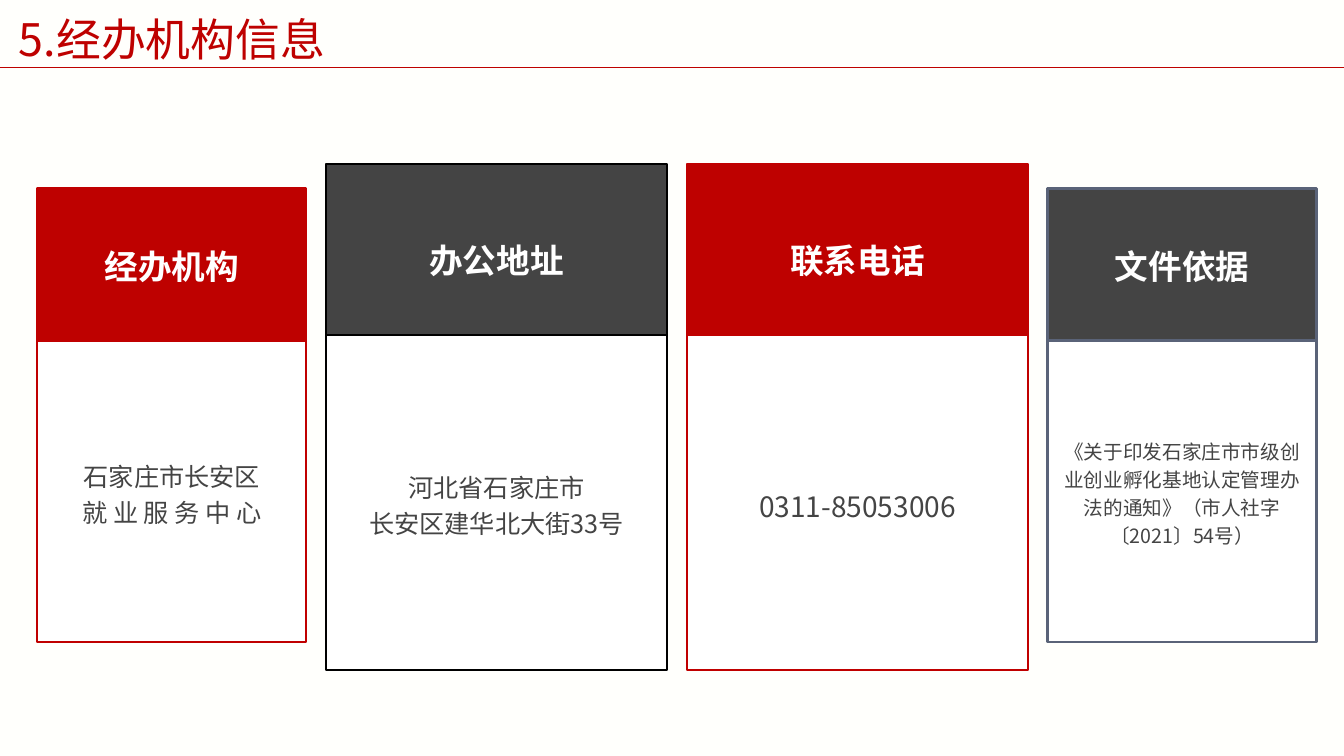
from lxml.etree import SubElement
from pptx import Presentation
from pptx.dml.color import RGBColor
from pptx.enum.shapes import MSO_CONNECTOR as Connector, MSO_SHAPE as Shape
from pptx.enum.text import MSO_ANCHOR as Anchor, PP_ALIGN as Align
from pptx.oxml.ns import qn
from pptx.util import Inches, Pt

RED, BORDER_RED, GREY, WHITE = "BE0100", "C00000", "444444", "FFFFFF"
BLACK, SLATE = "000000", "5A6378"

# Card sizes: top, width, heading height, body height
SMALL = (1.87, 2.67, 1.51, 2.99)
LARGE = (1.63, 3.39, 1.69, 3.33)
FIRST_LEFT, GAP = 0.37, 0.19

# Size, heading, body, body text size, heading fill, border, border width
CARDS = [
    (SMALL, "经办机构", "石家庄市长安区\n就 业 服 务 中 心", 18, RED, BORDER_RED, 1.5),
    (LARGE, "办公地址", "河北省石家庄市\n长安区建华北大街33号", 18, GREY, BLACK, 1.5),
    (LARGE, "联系电话", "0311-85053006", 20, RED, BORDER_RED, 1.5),
    (SMALL, "文件依据",
     "《关于印发石家庄市市级创业创业孵化基地认定管理办法的通知》（市人社字〔2021〕54号）",
     14, GREY, SLATE, 1.75),
]


def color(value):
    return RGBColor.from_string(value)


def write_text(frame, text, font, size, text_color, bold=False, align=Align.CENTER,
               spacing=None, anchor=Anchor.MIDDLE, wrap=True, bottom=0.05):
    """Fill a text frame, one paragraph for each line of text."""
    frame.word_wrap = wrap
    frame.vertical_anchor = anchor
    frame.margin_bottom = Inches(bottom)
    for number, line in enumerate(text.split("\n")):
        paragraph = frame.add_paragraph() if number else frame.paragraphs[0]
        paragraph.alignment = align
        if spacing:
            paragraph.line_spacing = spacing
        run = paragraph.add_run()
        run.text = line
        run.font.name = font
        run.font.size = Pt(size)
        run.font.bold = bold
        run.font.color.rgb = color(text_color)
        # East Asian characters take their own font entry
        SubElement(run.font._element, qn("a:ea"), typeface=font)


class SlideBuilder:
    font = "Noto Sans CJK SC"

    def __init__(self, slide, background):
        self.slide = slide
        slide.background.fill.solid()
        slide.background.fill.fore_color.rgb = color(background)

    def line(self, left, top, right, bottom, stroke, width):
        connector = self.slide.shapes.add_connector(
            Connector.STRAIGHT, Inches(left), Inches(top), Inches(right), Inches(bottom))
        connector.line.color.rgb = color(stroke)
        connector.line.width = Pt(width)
        SubElement(connector._element.spPr, qn("a:effectLst"))

    def title(self, text, left, top, width, height):
        box = self.slide.shapes.add_textbox(
            Inches(left), Inches(top), Inches(width), Inches(height))
        write_text(box.text_frame, text, self.font, 32, RED, align=Align.LEFT)

    def box(self, left, top, width, height, fill, stroke, stroke_width, text, **text_format):
        shape = self.slide.shapes.add_shape(
            Shape.RECTANGLE, Inches(left), Inches(top), Inches(width), Inches(height))
        shape.shadow.inherit = False
        shape.fill.solid()
        shape.fill.fore_color.rgb = color(fill)
        shape.line.color.rgb = color(stroke)
        shape.line.width = Pt(stroke_width)
        write_text(shape.text_frame, text, self.font, **text_format)

    def card(self, left, size, heading, body, body_size, fill, stroke, stroke_width):
        top, width, head_height, body_height = size
        self.box(left, top + head_height, width, body_height, WHITE, stroke, stroke_width,
                 body, size=body_size, text_color=GREY, spacing=1.2)
        self.box(left, top, width, head_height, fill, stroke, stroke_width,
                 heading, size=24, text_color=WHITE, bold=True,
                 anchor=Anchor.BOTTOM, wrap=False, bottom=0.54)


def main():
    presentation = Presentation()
    presentation.slide_width = Inches(13.33)
    presentation.slide_height = Inches(7.5)
    slide = presentation.slides.add_slide(presentation.slide_layouts[6])
    builder = SlideBuilder(slide, "FFFFFC")

    # Title and rule
    builder.line(0, 0.67, 13.33, 0.67, RED, 0.5)
    builder.title("5.经办机构信息", 0.09, 0.06, 5.76, 0.64)

    # Cards from left to right
    left = FIRST_LEFT
    for size, *content in CARDS:
        builder.card(left, size, *content)
        left += size[1] + GAP

    presentation.save("out.pptx")


if __name__ == "__main__":
    main()
